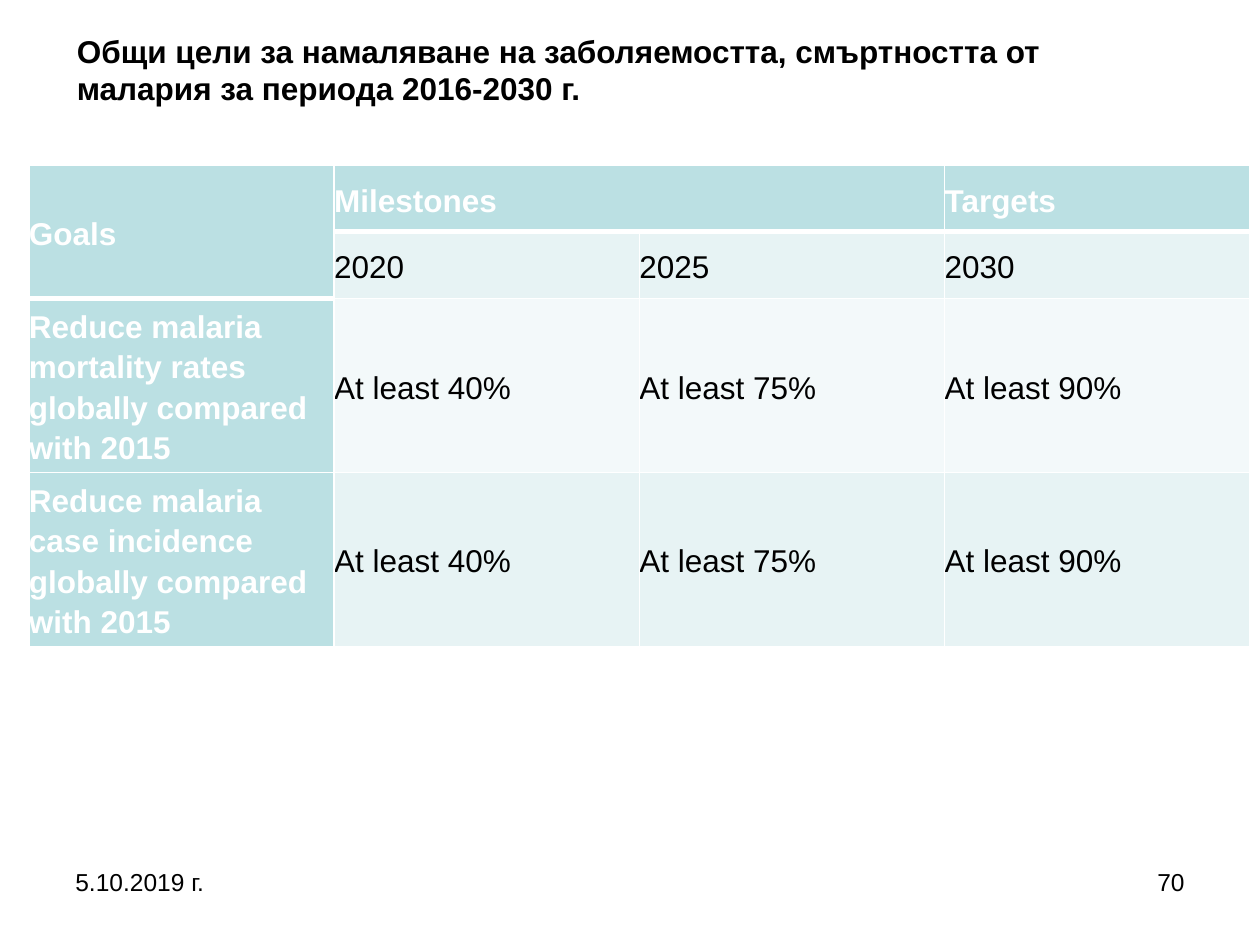
from pptx import Presentation
from pptx.dml.color import RGBColor
from pptx.enum.text import MSO_ANCHOR as Anchor, PP_ALIGN as Align
from pptx.oxml.ns import qn
from pptx.util import Inches, Pt
from lxml.etree import SubElement

WHITE = RGBColor(0xFF, 0xFF, 0xFF)
BLACK = RGBColor(0, 0, 0)
TEAL = RGBColor(0xBB, 0xE0, 0xE3)
BAND = RGBColor(0xE7, 0xF3, 0xF4)
PALE = RGBColor(0xF3, 0xF9, 0xFA)

ROWS = [
    ("Goals", "Milestones", "", "Targets"),
    ("", "2020", "2025", "2030"),
    ("Reduce malaria mortality rates globally compared with 2015",
     "At least 40%", "At least 75%", "At least 90%"),
    ("Reduce malaria case incidence globally compared with 2015",
     "At least 40%", "At least 75%", "At least 90%"),
]
ROW_HEIGHTS = (0.53, 0.53, 1.11, 1.11)


def set_attrs(obj, values):
    """Set every attribute in a dict of format values."""
    for name, value in values.items():
        setattr(obj, name, value)


def write(tf, text, size, color=BLACK, bold=False, **para):
    """Fill the first paragraph of a text frame with one formatted run."""
    p = tf.paragraphs[0]
    set_attrs(p, para)
    r = p.add_run()
    r.text = text
    set_attrs(r.font, {"name": "Arial", "size": Pt(size), "bold": bold})
    r.font.color.rgb = color


def place(sp, box):
    """Move a shape to a box of left, top, width and height in inches."""
    set_attrs(sp, dict(zip(("left", "top", "width", "height"), map(Inches, box))))


def add_title(slide, box):
    """Format the title placeholder."""
    sp = slide.shapes.title
    place(sp, box)
    set_attrs(sp.text_frame, {"word_wrap": True, "vertical_anchor": Anchor.TOP})
    write(sp.text_frame, "Общи цели за намаляване на заболяемостта, смъртността "
          "от малария за периода 2016-2030 г.", 18, bold=True, alignment=Align.LEFT)


def add_footer(slide, box, text, align):
    """Add one footer text."""
    tf = slide.shapes.add_textbox(*map(Inches, box)).text_frame
    tf.word_wrap = True
    write(tf, text, 14, alignment=align)


def set_borders(cell, bottom):
    """Draw white cell borders, with the given bottom width in points."""
    pr = cell._tc.get_or_add_tcPr()
    for i, (side, width) in enumerate(zip("LRTB", (1, 1, 1, bottom))):
        ln = pr.makeelement(qn(f"a:ln{side}"), {"w": str(Pt(width))})
        fill = SubElement(ln, qn("a:solidFill"))
        SubElement(fill, qn("a:srgbClr"), val=str(WHITE))
        pr.insert(i, ln)


def format_cell(cell, text, row, col):
    """Fill, border and label one cell by its place in the table."""
    heading = row == 0 or col == 0
    set_attrs(cell, {"margin_left": 0, "margin_right": 0, "margin_top": 0,
                     "margin_bottom": 0, "vertical_anchor": Anchor.MIDDLE})
    cell.fill.solid()
    cell.fill.fore_color.rgb = TEAL if heading else BAND if row % 2 else PALE
    set_borders(cell, 3 if row == 0 or (row, col) == (1, 0) else 1)
    if text:
        write(cell.text_frame, text, 18, WHITE if heading else BLACK, heading,
              line_spacing=1.15, space_after=Pt(15))


def add_goals_table(slide, box):
    """Add the table of goals, milestones and targets."""
    table = slide.shapes.add_table(len(ROWS), len(ROWS[0]), *map(Inches, box)).table
    for column in table.columns:
        column.width = Inches(box[2] / len(ROWS[0]))
    for row, height in zip(table.rows, ROW_HEIGHTS):
        row.height = Inches(height)
    for i, texts in enumerate(ROWS):
        for j, text in enumerate(texts):
            format_cell(table.cell(i, j), text, i, j)
    table.cell(0, 0).merge(table.cell(1, 0))
    table.cell(0, 1).merge(table.cell(0, 2))


def main():
    """Build and save the slide."""
    prs = Presentation()
    set_attrs(prs, {"slide_width": Inches(10), "slide_height": Inches(7.5)})
    slide = prs.slides.add_slide(prs.slide_layouts[5])
    add_footer(slide, (0.5, 6.83, 2.33, 0.52), "5.10.2019 г.", Align.LEFT)
    add_footer(slide, (7.17, 6.83, 2.33, 0.52), "70", Align.RIGHT)
    add_goals_table(slide, (0.23, 1.31, 9.69, sum(ROW_HEIGHTS)))
    add_title(slide, (0.51, 0.2, 8.98, 0.71))
    prs.save("out.pptx")


if __name__ == "__main__":
    main()
